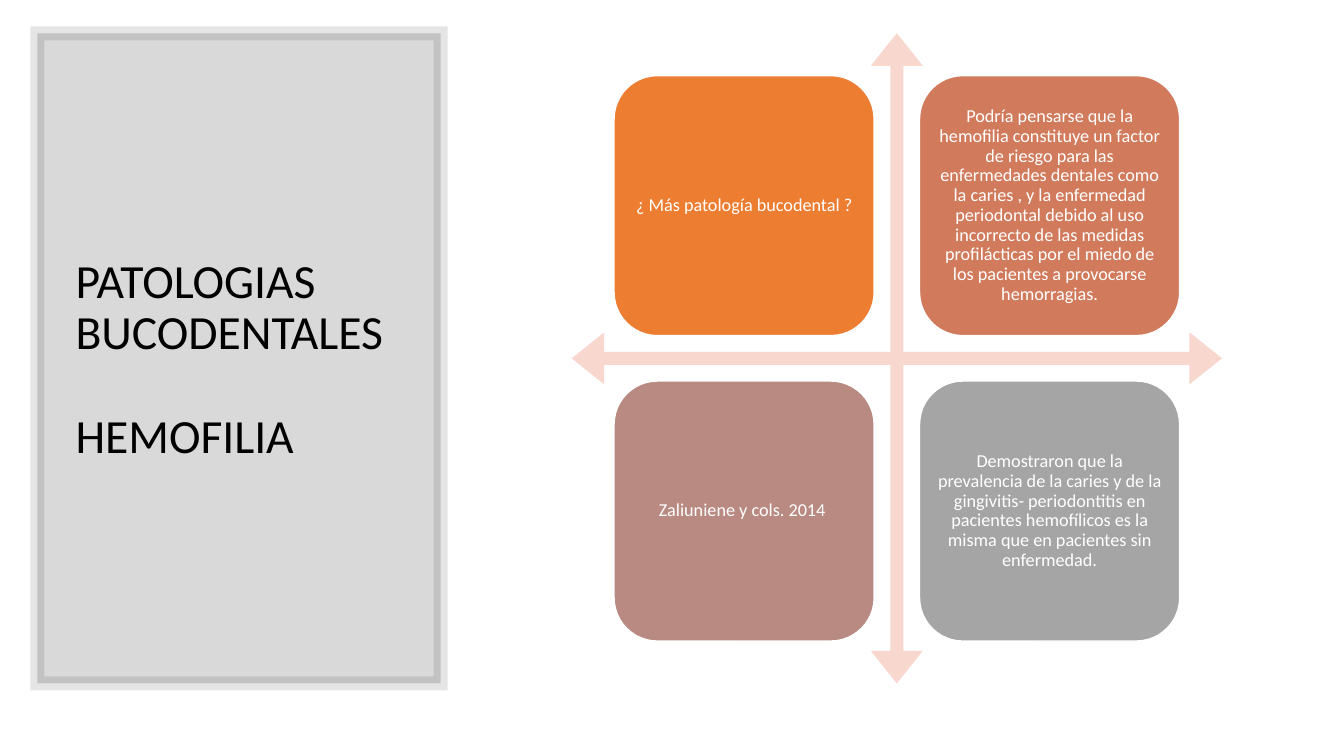
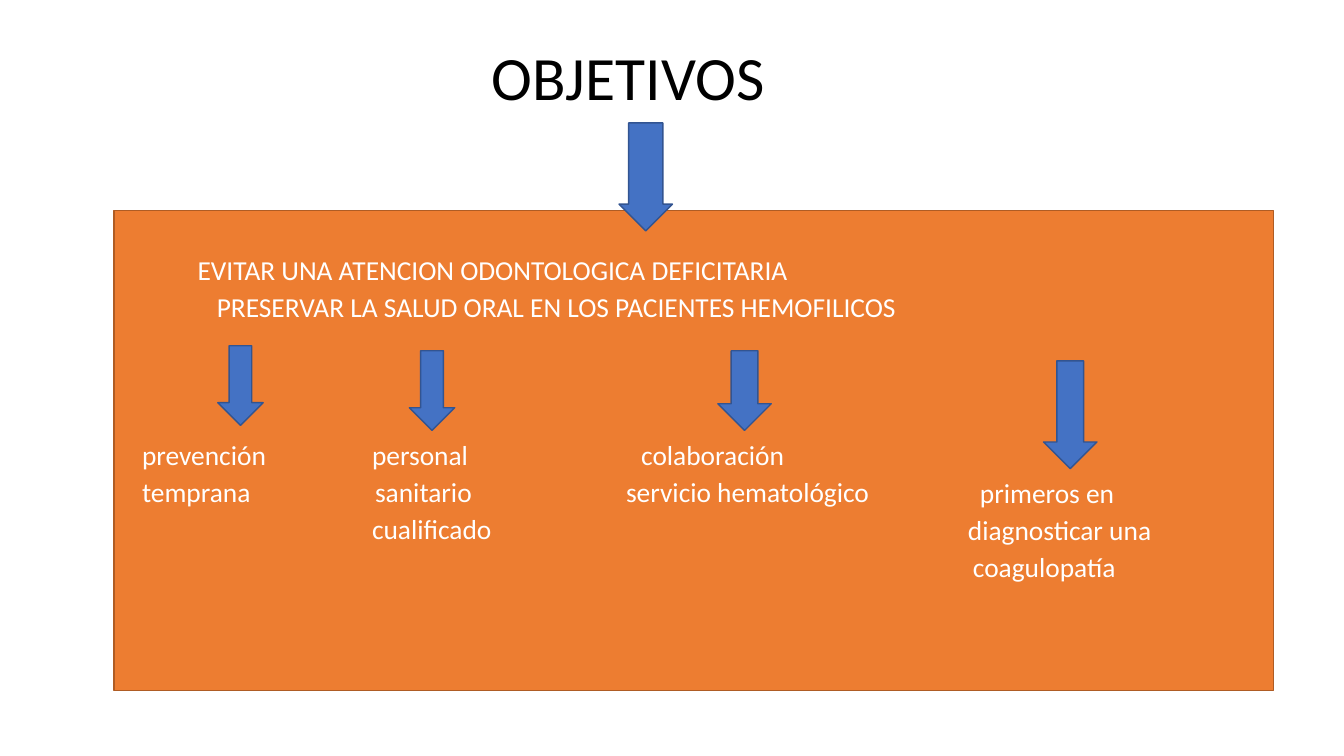
from dataclasses import dataclass

from lxml import etree
from pptx import Presentation
from pptx.dml.color import RGBColor
from pptx.enum.shapes import MSO_SHAPE
from pptx.enum.text import MSO_ANCHOR, MSO_AUTO_SIZE, PP_ALIGN
from pptx.oxml.ns import qn
from pptx.util import Inches, Pt

RECTANGLE = MSO_SHAPE.RECTANGLE
ROUNDED = MSO_SHAPE.ROUNDED_RECTANGLE
QUAD_ARROW = MSO_SHAPE.QUAD_ARROW
DOWN_ARROW = MSO_SHAPE.DOWN_ARROW
LEFT, CENTER = PP_ALIGN.LEFT, PP_ALIGN.CENTER
TOP, MIDDLE = MSO_ANCHOR.TOP, MSO_ANCHOR.MIDDLE
NO_AUTOFIT = MSO_AUTO_SIZE.NONE

BLACK = RGBColor(0x00, 0x00, 0x00)
WHITE = RGBColor(0xFF, 0xFF, 0xFF)
ORANGE = RGBColor(0xED, 0x7D, 0x31)
DARK_ORANGE = RGBColor(0xAF, 0x5C, 0x24)
TERRACOTTA = RGBColor(0xD1, 0x7B, 0x5C)
DUSTY_ROSE = RGBColor(0xB9, 0x8A, 0x82)
GRAY = RGBColor(0xA5, 0xA5, 0xA5)
PALE_PINK = RGBColor(0xF8, 0xD7, 0xCE)
BLUE = RGBColor(0x44, 0x72, 0xC4)
DARK_BLUE = RGBColor(0x32, 0x54, 0x91)

FONT = "Calibri"
TITLE_ONLY, TITLE_AND_CONTENT = 5, 1


@dataclass(frozen=True)
class Box:
    left: float
    top: float
    width: float
    height: float


@dataclass(frozen=True)
class Tile:
    text: str
    color: RGBColor


@dataclass(frozen=True)
class Line:
    text: str
    indent: float = 0


@dataclass(frozen=True)
class Measure:
    box: Box
    lines: tuple[Line, ...]


@dataclass(frozen=True)
class Arrow:
    box: Box
    shaft: float = 0.5


TILES = (
    Tile("¿ Más patología bucodental ?", ORANGE),
    Tile("Podría pensarse que la hemofilia constituye un factor de riesgo para las "
         "enfermedades dentales como la caries , y la enfermedad periodontal debido "
         "al uso incorrecto de las medidas profilácticas por el miedo de los "
         "pacientes a provocarse hemorragias.", TERRACOTTA),
    Tile("Zaliuniene y cols. 2014 ", DUSTY_ROSE),
    Tile("Demostraron que la prevalencia de la caries y de la gingivitis- "
         "periodontitis en pacientes hemofílicos es la misma que en pacientes sin "
         "enfermedad.", GRAY),
)
TILE_LEFT, TILE_TOP, TILE_SIZE, TILE_PITCH = 6.09, 0.75, 2.58, 3.03

GOALS = (
    Line("EVITAR UNA ATENCION ODONTOLOGICA DEFICITARIA", 0.73),
    Line("PRESERVAR LA SALUD ORAL EN LOS PACIENTES HEMOFILICOS", 0.92),
)
MEASURES = (
    Measure(Box(1.41, 4.44, 2, 0.7), (Line("prevención"), Line("temprana"))),
    Measure(Box(3.69, 4.44, 2, 1.1),
            (Line("personal"), Line("sanitario", 0.03), Line("cualificado"))),
    Measure(Box(6.21, 4.44, 3, 0.7),
            (Line("colaboración", 0.15), Line("servicio hematológico"))),
    Measure(Box(9.6, 4.81, 2.6, 1.1),
            (Line("primeros en", 0.12), Line("diagnosticar una"),
             Line("coagulopatía", 0.05))),
)

ARROWS = (
    Arrow(Box(6.14, 1.22, 0.53, 1.07), 0.64),
    Arrow(Box(2.16, 3.43, 0.45, 0.79)),
    Arrow(Box(4.06, 3.48, 0.45, 0.79)),
    Arrow(Box(7.12, 3.48, 0.53, 0.79)),
    Arrow(Box(10.35, 3.58, 0.53, 1.07)),
)


def place(shape, box: Box) -> None:
    shape.left, shape.top = Inches(box.left), Inches(box.top)
    shape.width, shape.height = Inches(box.width), Inches(box.height)


def paint(shape, fill: RGBColor, line: RGBColor | None = None,
          line_width: float = 1) -> None:
    shape.fill.solid()
    shape.fill.fore_color.rgb = fill
    if line is None:
        shape.line.fill.background()
    else:
        shape.line.color.rgb = line
        shape.line.width = Pt(line_width)


def add_figure(slide, kind, box: Box, fill: RGBColor, line: RGBColor | None = None,
               line_width: float = 1):
    figure = slide.shapes.add_shape(kind, 0, 0, 0, 0)
    place(figure, box)
    figure.shadow.inherit = False
    paint(figure, fill, line, line_width)
    return figure


def set_opacity(shape, *percents: int) -> None:
    """Give the shape's colours, fill first and then line, their opacity."""
    colors = shape.element.spPr.iter(qn("a:srgbClr"))
    for color, percent in zip(colors, percents):
        etree.SubElement(color, qn("a:alpha")).set("val", str(percent * 1000))


def square_corners(shape) -> None:
    outline = shape.element.spPr.find(qn("a:ln"))
    etree.SubElement(outline, qn("a:miter"), lim="800000")


def write(shape, text: str, size: float, color: RGBColor, align=LEFT,
          anchor=MIDDLE, spacing: float = 0.9) -> None:
    frame = shape.text_frame
    frame.text = text
    frame.word_wrap = True
    frame.auto_size = NO_AUTOFIT
    frame.vertical_anchor = anchor
    for paragraph in frame.paragraphs:
        paragraph.alignment = align
        paragraph.line_spacing = spacing
        paragraph.space_before = Pt(0)
        for run in paragraph.runs:
            run.font.name = FONT
            run.font.size = Pt(size)
            run.font.color.rgb = color


def write_lines(shape, lines: tuple[Line, ...]) -> None:
    """Write tight lines without bullets, each with its own left indent."""
    write(shape, "\n".join(line.text for line in lines), 19.6, WHITE,
          anchor=TOP, spacing=0.7)
    for index, (paragraph, line) in enumerate(zip(shape.text_frame.paragraphs, lines)):
        paragraph.space_before = Pt(10 if index else 0)
        properties = paragraph._p.get_or_add_pPr()
        properties.set("marL", str(Inches(line.indent)))
        properties.set("indent", "0")
        etree.SubElement(properties, qn("a:buNone"))


def set_margins(frame, margin: float) -> None:
    frame.margin_left = frame.margin_right = Inches(margin)
    frame.margin_top = frame.margin_bottom = Inches(margin)


def set_title(slide, text: str, box: Box, size: float, align=LEFT):
    title = slide.shapes.title
    place(title, box)
    write(title, text, size, BLACK, align)
    return title


def build_pathologies(presentation) -> None:
    slide = presentation.slides.add_slide(presentation.slide_layouts[TITLE_ONLY])
    title = set_title(slide, "PATOLOGIAS BUCODENTALES\nHEMOFILIA",
                      Box(0.65, 0.7, 3.46, 5.75), 34)
    title.text_frame.paragraphs[1].space_before = Pt(37)
    panel = add_figure(slide, RECTANGLE, Box(0.37, 0.33, 4, 6.45), BLACK, BLACK, 10)
    set_opacity(panel, 15, 10)
    square_corners(panel)
    title.element.addprevious(panel.element)

    cross = add_figure(slide, QUAD_ARROW, Box(5.67, 0.33, 6.45, 6.45), PALE_PINK)
    for index, ratio in enumerate((0.02, 0.04, 0.05)):
        cross.adjustments[index] = ratio

    for index, tile in enumerate(TILES):
        row, column = divmod(index, 2)
        box = Box(TILE_LEFT + column * TILE_PITCH, TILE_TOP + row * TILE_PITCH,
                  TILE_SIZE, TILE_SIZE)
        card = add_figure(slide, ROUNDED, box, tile.color, WHITE)
        write(card, tile.text, 13, WHITE, CENTER)
        set_margins(card.text_frame, 0.05)


def build_goals(presentation) -> None:
    slide = presentation.slides.add_slide(
        presentation.slide_layouts[TITLE_AND_CONTENT])
    set_title(slide, "OBJETIVOS", Box(0.92, 0.4, 10.62, 0.8), 44, CENTER)

    goals = slide.placeholders[1]
    place(goals, Box(1.13, 2.09, 11.5, 4.76))
    paint(goals, ORANGE, DARK_ORANGE)
    write_lines(goals, GOALS)
    goals.text_frame.margin_top = Inches(0.51)

    for measure in MEASURES:
        caption = slide.shapes.add_textbox(0, 0, 0, 0)
        place(caption, measure.box)
        write_lines(caption, measure.lines)
        set_margins(caption.text_frame, 0)

    for arrow in ARROWS:
        pointer = add_figure(slide, DOWN_ARROW, arrow.box, BLUE, DARK_BLUE)
        pointer.adjustments[0] = arrow.shaft


def main() -> None:
    presentation = Presentation()
    presentation.slide_width = Inches(13.33)
    presentation.slide_height = Inches(7.5)
    build_pathologies(presentation)
    build_goals(presentation)
    presentation.save("out.pptx")


if __name__ == "__main__":
    main()
